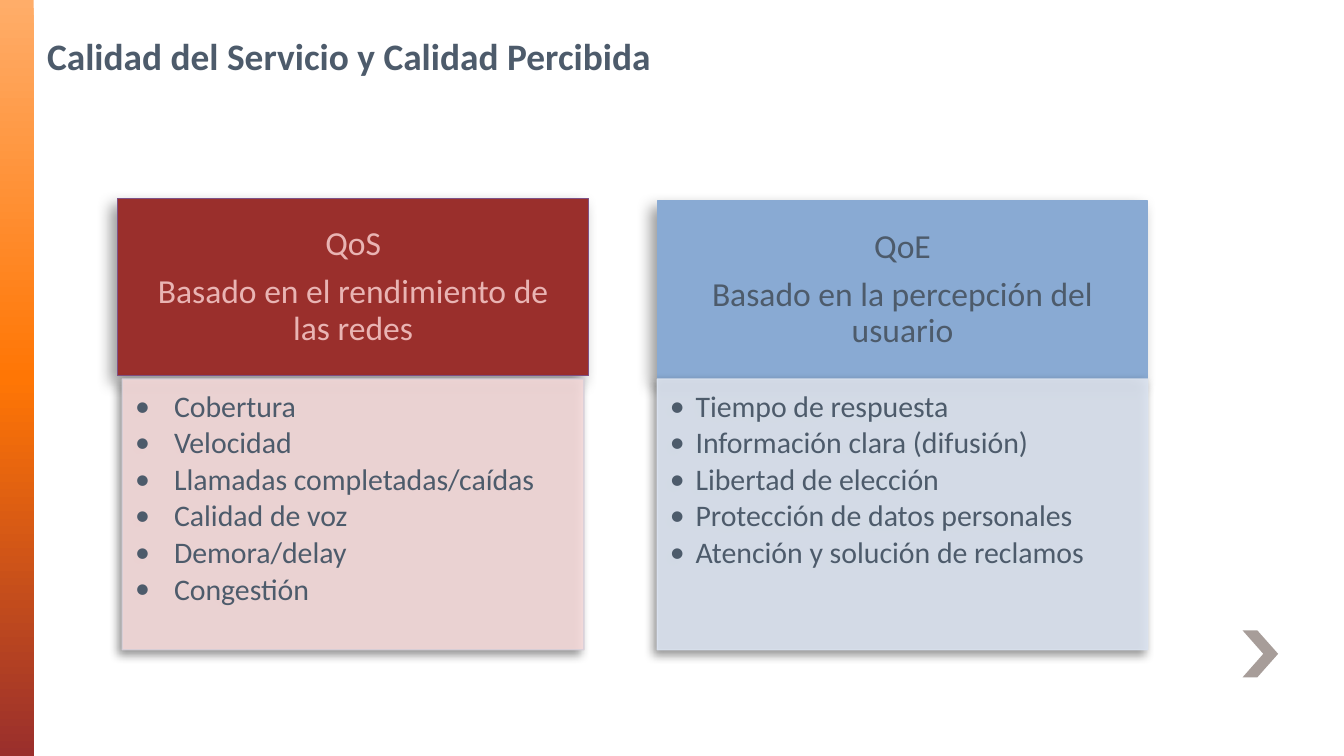
from lxml.etree import SubElement
from pptx import Presentation
from pptx.dml.color import RGBColor
from pptx.enum.shapes import MSO_SHAPE as SHAPE
from pptx.enum.text import MSO_ANCHOR as ANCHOR, MSO_AUTO_SIZE as AUTO, PP_ALIGN as ALIGN
from pptx.oxml.ns import qn
from pptx.util import Pt

PX = 4572  # 200 px to the inch
WIDE, HIGH = 2000, 1125
HEAD, BODY = 264, 403  # heights of the two parts of a card
HUES = {
    "ink": "4D5B6B", "mark": "A79D99", "black": "000000",
    "top": "FFAD69", "mid": "FF7605", "end": "9A2F2C",
    "red": "9A2F2C", "plum": "7F5185", "rose": "E9B4B3",
    "pink": "F4D9D9", "mauve": "D8D0D9",
    "blue": "89AAD3", "ice": "DAE2EF",
}


def px(*nums):
    return [n * PX for n in nums]


def tint(fill, hue, alpha=100):
    """Set a solid fill, see-through when alpha is below 100."""
    fill.solid()
    fill.fore_color.rgb = RGBColor.from_string(HUES[hue])
    if alpha < 100:
        node = fill._xPr.find(qn("a:solidFill"))[0]
        SubElement(node, qn("a:alpha"), val=str(alpha * 1000))


def shade(shape, alpha, blur, dist):
    """Cast a soft shadow to the lower left."""
    shape.shadow.inherit = False
    glow = SubElement(
        shape._element.spPr.find(qn("a:effectLst")), qn("a:outerShdw"),
        blurRad=str(Pt(blur)), dist=str(Pt(dist)), dir="8100000",
        algn="tr", rotWithShape="0")
    tone = SubElement(glow, qn("a:srgbClr"), val=HUES["black"])
    SubElement(tone, qn("a:alpha"), val=str(alpha * 1000))


def style(para, size, hue, bold=False):
    for run in para.runs:
        font = run.font
        font.name, font.size, font.bold = "Calibri", Pt(size), bold
        font.color.rgb = RGBColor.from_string(HUES[hue])


def bullet(para, indent):
    props = para._p.get_or_add_pPr()
    props.set("marL", str(indent * PX))
    props.set("indent", str(-indent * PX))
    SubElement(props, qn("a:buFont"), typeface="Calibri")
    SubElement(props, qn("a:buChar"), char="•")


def panel(slide, box, fill, line, alpha, pads):
    """Add a filled box with inner margins."""
    shape = slide.shapes.add_shape(SHAPE.RECTANGLE, *px(*box))
    tint(shape.fill, fill, alpha)
    tint(shape.line.fill, line, alpha)
    shape.line.width = Pt(0.75)
    frame = shape.text_frame
    frame.word_wrap = True
    (frame.margin_left, frame.margin_top,
     frame.margin_right, frame.margin_bottom) = px(*pads)
    return shape


def write(frame, lines, size, hue, align, after):
    frame.text = "\n".join(lines)
    for para in frame.paragraphs:
        para.alignment = align
        para.line_spacing = 0.9
        para.space_after = Pt(after)
        style(para, size, hue)


def card(slide, box, inset, indent, hues, head, items):
    """Place a heading above a bullet list; hues: head fill, line, text, list fill, line."""
    left, top, width, height = box
    fill, line, ink, pale, edge = hues

    upper = panel(slide, (left, top, width, HEAD), fill, line, 100, (28, 16, 28, 16))
    shade(upper, 40, 8, 5)
    upper.text_frame.vertical_anchor = ANCHOR.MIDDLE
    write(upper.text_frame, head, 18, ink, ALIGN.CENTER, 6.3)

    spot = (left + inset, top + height - BODY, width - 2 * inset, BODY)
    lower = panel(slide, spot, pale, edge, 90, (19, 19, 25, 28))
    shade(lower, 45, 5, 3)
    lower.text_frame.vertical_anchor = ANCHOR.TOP
    write(lower.text_frame, items, 16, "ink", ALIGN.LEFT, 2.3)
    for para in lower.text_frame.paragraphs:
        bullet(para, indent)


def band(slide, box):
    """Place the side band, shaded from top to bottom."""
    shape = slide.shapes.add_shape(SHAPE.RECTANGLE, *px(*box))
    shape.shadow.inherit = False
    shape.line.fill.background()
    shape.fill.gradient()
    shape.fill.gradient_angle = 270
    stops = shape._element.spPr.find(qn("a:gradFill")).find(qn("a:gsLst"))
    stops.clear()
    for pos, hue in ((0, "top"), (50, "mid"), (100, "end")):
        stop = SubElement(stops, qn("a:gs"), pos=str(pos * 1000))
        SubElement(stop, qn("a:srgbClr"), val=HUES[hue])


def arrow(slide, box):
    left, top, width, height = box
    right, base, mid = left + width, top + height, top + height // 2
    start, *rest = [
        (left + 22, top), (left, top), (left + 31, mid),
        (left, base), (left + 22, base), (right, mid)]
    pen = slide.shapes.build_freeform(*start, scale=PX)
    pen.add_line_segments(rest, close=True)
    shape = pen.convert_to_shape()
    shape.shadow.inherit = False
    tint(shape.fill, "mark")
    shape.line.fill.background()


def heading(slide, box, text):
    title = slide.shapes.title
    title.left, title.top, title.width, title.height = px(*box)
    frame = title.text_frame
    frame.text = text
    frame.word_wrap = True
    frame.auto_size = AUTO.NONE
    frame.vertical_anchor = ANCHOR.MIDDLE
    para = frame.paragraphs[0]
    para.alignment = ALIGN.JUSTIFY
    style(para, 20, "ink", True)


def main():
    deck = Presentation()
    deck.slide_width, deck.slide_height = px(WIDE, HIGH)
    slide = deck.slides.add_slide(deck.slide_layouts[5])
    band(slide, (0, 0, 50, HIGH))
    arrow(slide, (1849, 938, 53, 70))
    heading(slide, (50, 28, 1626, 110), "Calidad del Servicio y Calidad Percibida")
    card(slide, (175, 295, 701, 672), 7, 58,
         ("red", "plum", "rose", "pink", "mauve"),
         ("QoS", "Basado en el rendimiento de las redes"),
         ("Cobertura", "Velocidad", "Llamadas completadas/caídas",
          "Calidad de voz", "Demora/delay", "Congestión"))
    card(slide, (978, 299, 730, 668), 0, 38,
         ("blue", "blue", "ink", "ice", "ice"),
         ("QoE", "Basado en la percepción del usuario"),
         ("Tiempo de respuesta", "Información clara (difusión)",
          "Libertad de elección", "Protección de datos personales",
          "Atención y solución de reclamos"))
    deck.save("out.pptx")


if __name__ == "__main__":
    main()
